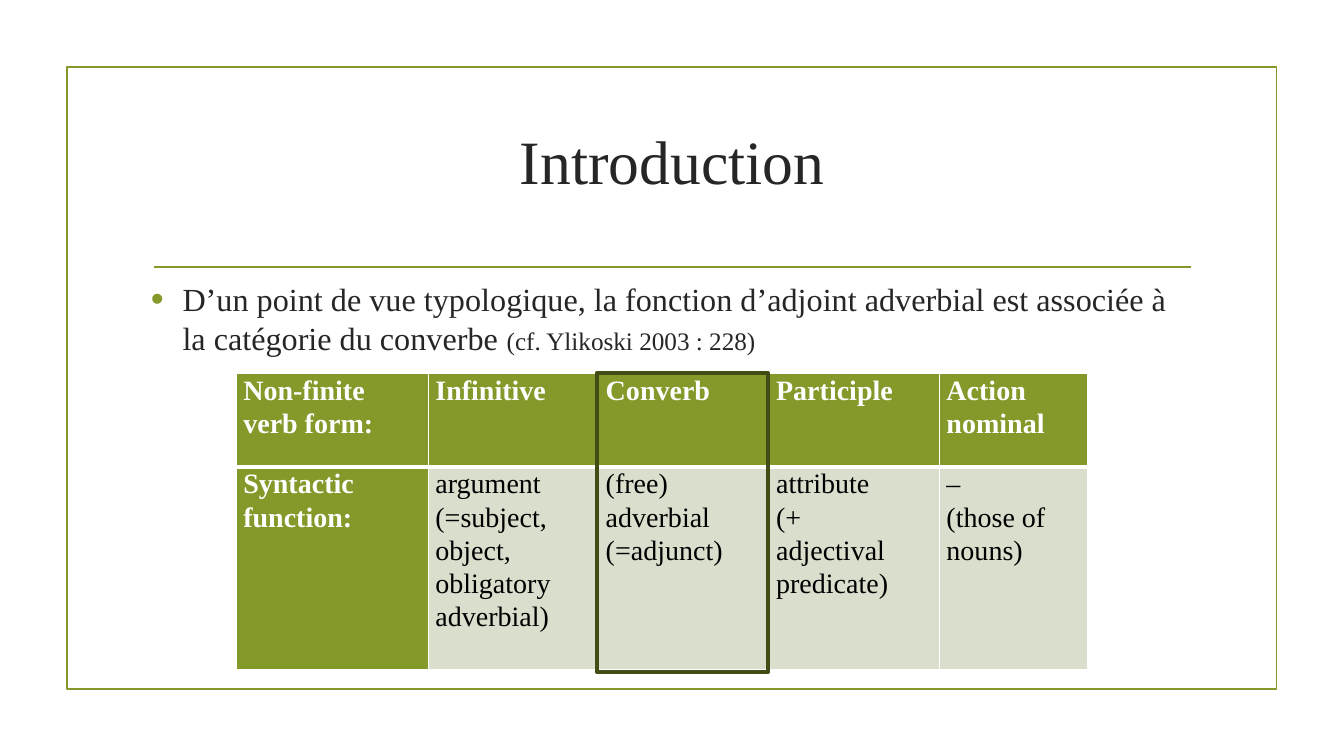
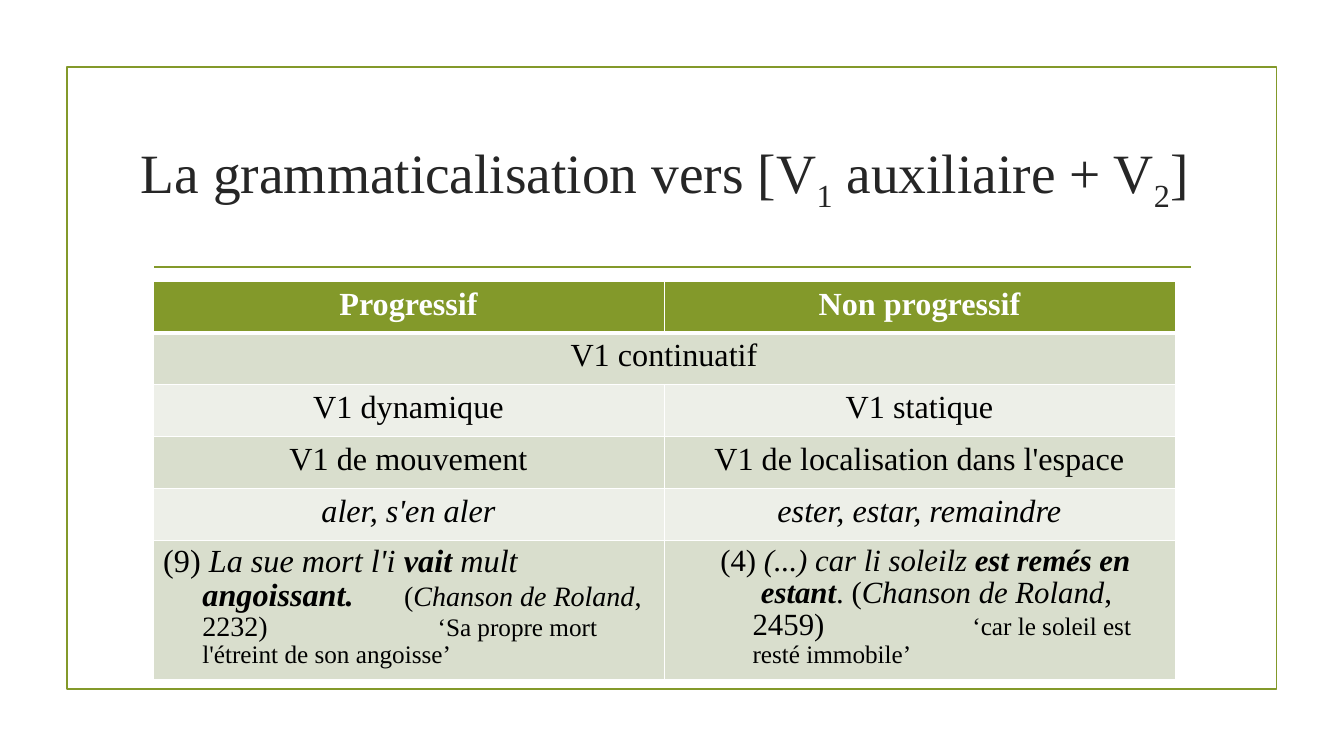
"""Two slides on converbs and on the grammaticalisation of verbal periphrases."""
from lxml.etree import SubElement
from pptx import Presentation
from pptx.dml.color import RGBColor
from pptx.enum.shapes import MSO_CONNECTOR as CONN, MSO_SHAPE as SHAPE
from pptx.enum.text import MSO_ANCHOR as ANCHOR, PP_ALIGN as ALIGN
from pptx.oxml.ns import qn
from pptx.util import Pt

COLORS = {"green": "83992A", "dark": "414D15", "text": "262626", "black": "000000",
          "white": "FFFFFF", "band": "D9DECD", "light": "EDEFE8"}
FONT = "Times New Roman"
FRAME = (47.8, 48, 864, 444.2)
RULE = (110.2, 190.8, 850.6, 190.8)
BOLD, ITALIC, SUB = {"bold": True}, {"italic": True}, {"sub": True}
BOTH = {**BOLD, **ITALIC}
BREAK = ("\n", {})

INTRO_TITLE = [("Introduction", {})]
INTRO_TEXT = [
    ("D’un point de vue typologique, la fonction d’adjoint adverbial est associée "
     "à la catégorie du converbe ", {}),
    ("(cf. Ylikoski 2003 : 228)", {"size": 18}),
]
FORMS = [
    ["Non-finite verb form:", "Infinitive", "Converb", "Participle", "Action\nnominal"],
    ["Syntactic function:", "argument\n(=subject,\nobject,\nobligatory\nadverbial)",
     "(free)\nadverbial\n(=adjunct)", "attribute\n(+\nadjectival\npredicate)",
     "–\n(those of\nnouns)"],
]
FORM_COLS = [137.2, 121.7, 121.7, 121.7, 105.5]
FORM_ROWS = [67, 144.7]
FORM_AT = (168.8, 266.4)
CONVERB = 2

AUX_TITLE = [("La grammaticalisation vers [V", {}), ("1", SUB),
             (" auxiliaire + V", {}), ("2", SUB), ("]", {})]
VERBS = [
    ["Progressif", "Non progressif"],
    ["V1 continuatif"],
    ["V1 dynamique", "V1 statique"],
    ["V1 de mouvement", "V1 de localisation dans l'espace"],
    ["aler, s'en aler", "ester, estar, remaindre"],
]
VERB_COLS = [365, 365]
VERB_ROWS = [37] * 5 + [90]
VERB_AT = (109.4, 200.9)
ITALIC_ROW = 4
EXAMPLES = [
    [
        ({"left": 28, "first": -28, "tab": 140, "size": 23},
         [("(9) ", {}), ("La sue mort l'i ", ITALIC), ("vait ", BOTH), ("mult ", ITALIC),
          ("angoissant.", BOTH), ("\t(", {"size": 20}),
          ("Chanson de Roland", {"size": 20, "italic": True}), (",", {"size": 20})]),
        ({"left": 28, "tab": 168, "size": 18},
         [("2232)\t", {"size": 20}), ("‘Sa propre mort", {}), BREAK,
          ("l'étreint de son angoisse’", {})]),
    ],
    [
        ({"left": 62, "first": -29, "size": 22},
         [("(4) ", {}), ("(...) car li soleilz ", ITALIC), ("est remés en estant", BOTH),
          (". (", {}), ("Chanson de Roland", ITALIC), (",", {})]),
        ({"left": 56, "tab": 157, "size": 18},
         [("2459)\t", {"size": 22}), ("‘car le soleil est", {}), BREAK,
          ("resté immobile’", {})]),
    ],
]


def rgb(name):
    return RGBColor.from_string(COLORS[name])


def write(p, runs, size, color, **base):
    for text, style in runs:
        if text == "\n":
            p.add_line_break()
            continue
        r = p.add_run()
        r.text = text
        fmt = {"name": FONT, "size": size, "bold": False, "italic": False, **base, **style}
        if fmt.pop("sub", False):
            r._r.get_or_add_rPr().set("baseline", "-25000")
        fmt["size"] = Pt(fmt["size"])
        for key, value in fmt.items():
            setattr(r.font, key, value)
        r.font.color.rgb = rgb(color)


def indent(p, left, first=None, tab=None):
    pPr = p._p.get_or_add_pPr()
    pPr.set("marL", str(Pt(left)))
    if first:
        pPr.set("indent", str(Pt(first)))
    if tab:
        tabs = SubElement(pPr, qn("a:tabLst"))
        SubElement(tabs, qn("a:tab"), pos=str(Pt(tab)), algn="l")


def bullet(p):
    pPr = p._p.get_or_add_pPr()
    color = SubElement(pPr, qn("a:buClr"))
    SubElement(color, qn("a:srgbClr"), val=COLORS["green"])
    SubElement(pPr, qn("a:buSzPct"), val="115000")
    SubElement(pPr, qn("a:buFont"), typeface="Arial")
    SubElement(pPr, qn("a:buChar"), char="•")


def add_text(s, box, anchor):
    tf = s.shapes.add_textbox(*map(Pt, box)).text_frame
    tf.word_wrap = True
    tf.vertical_anchor = anchor
    return tf.paragraphs[0]


def add_outline(s, box, color, width):
    sp = s.shapes.add_shape(SHAPE.RECTANGLE, *map(Pt, box))
    sp.shadow.inherit = False
    sp.fill.background()
    sp.line.color.rgb = rgb(color)
    sp.line.width = Pt(width)
    return sp


def add_slide(prs, title, box, size):
    s = prs.slides.add_slide(prs.slide_layouts[6])
    add_outline(s, FRAME, "green", 1.25)
    rule = s.shapes.add_connector(CONN.STRAIGHT, *map(Pt, RULE))
    rule.line.color.rgb = rgb("green")
    rule.line.width = Pt(1.25)
    SubElement(rule._element.spPr, qn("a:effectLst"))
    p = add_text(s, box, ANCHOR.MIDDLE)
    p.alignment = ALIGN.CENTER
    write(p, title, size, "text")
    return s


def style_cell(cell, fill, row):
    widths = {"L": 1, "R": 1, "T": 3 if row == 1 else 1, "B": 3 if row == 0 else 1}
    tcPr = cell._tc.get_or_add_tcPr()
    for side, width in widths.items():
        ln = SubElement(tcPr, qn("a:ln" + side), w=str(Pt(width)))
        SubElement(SubElement(ln, qn("a:solidFill")), qn("a:srgbClr"), val=COLORS["white"])
    cell.fill.solid()
    cell.fill.fore_color.rgb = rgb(fill)


def add_table(s, at, cols, rows):
    frame = s.shapes.add_table(len(rows), len(cols), *map(Pt, (*at, sum(cols), sum(rows))))
    tbl = frame.table
    tbl.horz_banding = False
    for col, width in zip(tbl.columns, cols):
        col.width = Pt(width)
    for row, height in zip(tbl.rows, rows):
        row.height = Pt(height)
    return tbl


def add_forms(s):
    tbl = add_table(s, FORM_AT, FORM_COLS, FORM_ROWS)
    margins = {"margin_left": 5, "margin_right": 5, "margin_top": 0, "margin_bottom": 0}
    for i, row in enumerate(FORMS):
        for j, text in enumerate(row):
            cell = tbl.cell(i, j)
            head = i == 0 or j == 0
            style_cell(cell, "green" if head else "band", i)
            for key, value in margins.items():
                setattr(cell, key, Pt(value))
            tf = cell.text_frame
            for n, line in enumerate(text.split("\n")):
                p = tf.add_paragraph() if n else tf.paragraphs[0]
                p.line_spacing = 1.07
                write(p, [(line, {})], 20, "white" if head else "black", bold=head)
    left = FORM_AT[0] + sum(FORM_COLS[:CONVERB])
    box = (left - 1, FORM_AT[1], FORM_COLS[CONVERB], sum(FORM_ROWS) + 2)
    sp = add_outline(s, box, "dark", 3)
    SubElement(sp.line._get_or_add_ln(), qn("a:round"))


def add_verbs(s):
    tbl = add_table(s, VERB_AT, VERB_COLS, VERB_ROWS)
    for i in range(len(VERB_ROWS)):
        fill = "green" if i == 0 else "band" if i % 2 else "light"
        for j in range(len(VERB_COLS)):
            style_cell(tbl.cell(i, j), fill, i)
    for i, row in enumerate(VERBS):
        if len(row) == 1:
            tbl.cell(i, 0).merge(tbl.cell(i, 1))
        for j, text in enumerate(row):
            p = tbl.cell(i, j).text_frame.paragraphs[0]
            p.alignment = ALIGN.CENTER
            write(p, [(text, {})], 23, "black" if i else "white",
                  bold=i == 0, italic=i == ITALIC_ROW)
    for j, example in enumerate(EXAMPLES):
        cell = tbl.cell(len(VERBS), j)
        cell.margin_bottom = Pt(0)
        tf = cell.text_frame
        for n, (layout, runs) in enumerate(example):
            p = tf.add_paragraph() if n else tf.paragraphs[0]
            p.line_spacing = 0.95
            indent(p, layout["left"], layout.get("first"), layout.get("tab"))
            write(p, runs, layout["size"], "black")


def main():
    prs = Presentation()
    prs.slide_width, prs.slide_height = Pt(960), Pt(540)

    s = add_slide(prs, INTRO_TITLE, (102.2, 77, 756, 74.2), 44)
    p = add_text(s, (100.8, 196, 756, 64), ANCHOR.TOP)
    indent(p, 22.5, -22.5)
    bullet(p)
    write(p, INTRO_TEXT, 23, "text")
    add_forms(s)

    s = add_slide(prs, AUX_TITLE, (91.4, 88.6, 766.8, 74.2), 39.6)
    add_verbs(s)
    prs.save("out.pptx")


if __name__ == "__main__":
    main()
